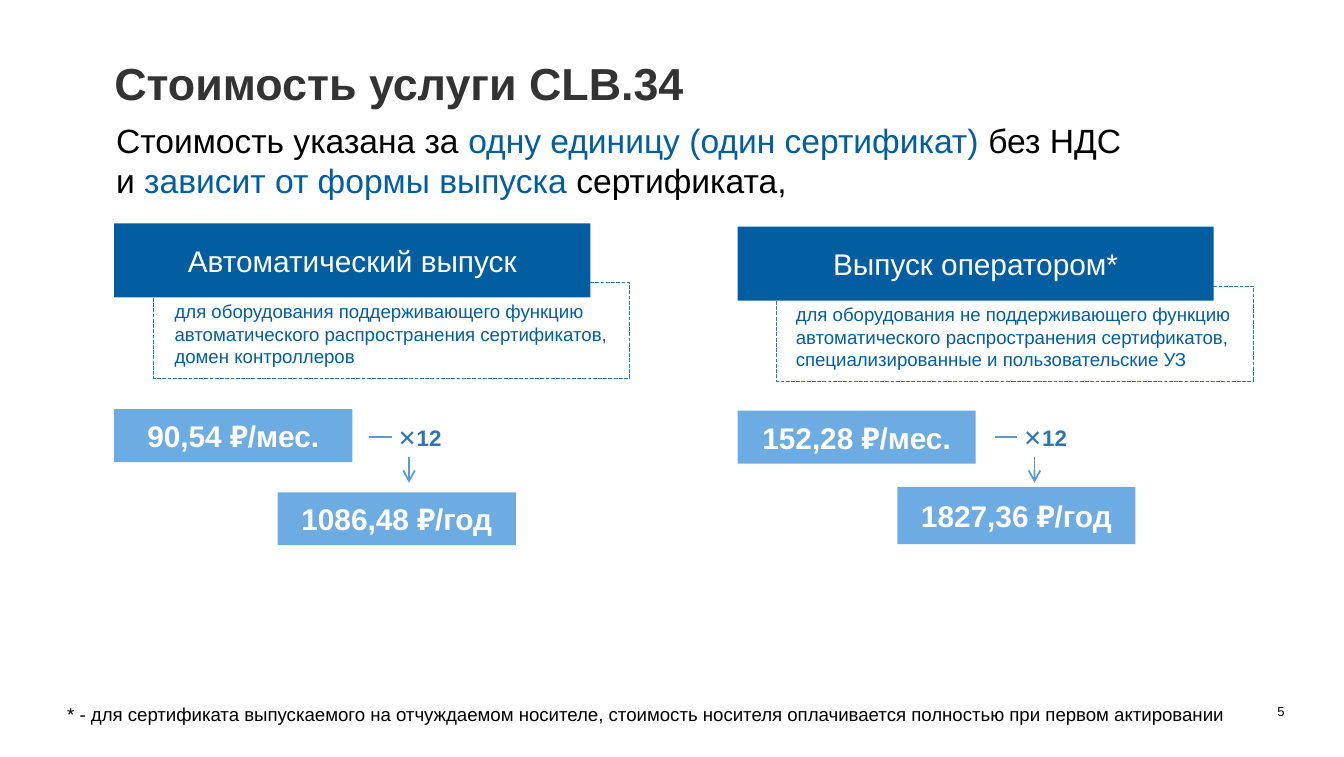
from lxml import etree
from pptx import Presentation
from pptx.dml.color import RGBColor
from pptx.enum.dml import MSO_LINE
from pptx.enum.shapes import MSO_CONNECTOR, MSO_SHAPE
from pptx.enum.text import MSO_ANCHOR, MSO_AUTO_SIZE, PP_ALIGN
from pptx.oxml.ns import qn
from pptx.util import Cm, Pt

RECTANGLE, STRAIGHT = MSO_SHAPE.RECTANGLE, MSO_CONNECTOR.STRAIGHT
LONG_DASH = MSO_LINE.LONG_DASH
TOP, MIDDLE, BOTTOM = MSO_ANCHOR.TOP, MSO_ANCHOR.MIDDLE, MSO_ANCHOR.BOTTOM
LEFT, CENTER, RIGHT, JUSTIFY = PP_ALIGN.LEFT, PP_ALIGN.CENTER, PP_ALIGN.RIGHT, PP_ALIGN.JUSTIFY
NO_AUTOFIT = MSO_AUTO_SIZE.NONE

BLACK = RGBColor(0x00, 0x00, 0x00)
WHITE = RGBColor(0xFF, 0xFF, 0xFF)
DARK_GRAY = RGBColor(0x33, 0x33, 0x33)
DARK_BLUE = RGBColor(0x02, 0x5E, 0xA1)
MID_BLUE = RGBColor(0x2E, 0x75, 0xB6)
ARROW_BLUE = RGBColor(0x5B, 0x9B, 0xD5)
LIGHT_BLUE = RGBColor(0x6C, 0xAC, 0xE3)

DEFAULT_INSETS = (0.25, 0.13, 0.25, 0.13)


def write(shape, lines, size, color, bold=False, align=CENTER, anchor=MIDDLE, insets=DEFAULT_INSETS):
    """Fill a shape with uniformly formatted paragraphs."""
    frame = shape.text_frame
    frame.word_wrap = True
    frame.auto_size = NO_AUTOFIT
    frame.vertical_anchor = anchor
    frame.margin_left, frame.margin_top, frame.margin_right, frame.margin_bottom = map(Cm, insets)
    frame.text = "\n".join(lines)
    for paragraph in frame.paragraphs:
        paragraph.alignment = align
        paragraph.font.name = "Arial"
        paragraph.font.size = Pt(size)
        paragraph.font.bold = bold
        paragraph.font.color.rgb = color


def add_block(left, top, width, height, fill=None):
    """Add a borderless rectangle, filled if a colour is given."""
    block = slide.shapes.add_shape(RECTANGLE, Cm(left), Cm(top), Cm(width), Cm(height))
    block.shadow.inherit = False
    block.line.fill.background()
    if fill is None:
        block.fill.background()
    else:
        block.fill.solid()
        block.fill.fore_color.rgb = fill
    return block


prs = Presentation()
prs.slide_width, prs.slide_height = Cm(25.4), Cm(14.3)
slide = prs.slides.add_slide(prs.slide_layouts[1])

# Title
title = slide.shapes.title
title.left, title.top, title.width, title.height = Cm(2.16), Cm(1.17), Cm(10.92), Cm(1.17)
write(title, ["Стоимость услуги CLB.34"], 24, DARK_GRAY, True, LEFT, TOP, (0, 0, 0, 0))
title.text_frame.paragraphs[0].line_spacing = 0.9

# Introduction with highlighted phrases
intro = slide.placeholders[1]
intro.left, intro.top, intro.width, intro.height = Cm(0.69), Cm(2.13), Cm(22.25), Cm(1.8)
intro_lines = [
    [("Стоимость указана за ", BLACK), ("одну единицу (один сертификат) ", DARK_BLUE), ("без НДС", BLACK)],
    [("и ", BLACK), ("зависит от формы выпуска ", DARK_BLUE), ("сертификата,", BLACK)],
]
frame = intro.text_frame
frame.auto_size = NO_AUTOFIT
frame.vertical_anchor = TOP
for number, phrases in enumerate(intro_lines):
    paragraph = frame.add_paragraph() if number else frame.paragraphs[0]
    properties = paragraph._p.get_or_add_pPr()
    properties.set("marL", "0")
    properties.set("indent", str(Cm(1.25)))
    etree.SubElement(properties, qn("a:buNone"))
    paragraph.alignment = JUSTIFY
    paragraph.space_before = Pt(0)
    paragraph.font.name = "Arial"
    paragraph.font.size = Pt(18)
    for phrase, color in phrases:
        run = paragraph.add_run()
        run.text = phrase
        run.font.color.rgb = color

# Footnote and slide number
footnote = add_block(1.17, 12.98, 22.38, 1.02, WHITE)
write(footnote, ["* - для сертификата выпускаемого на отчуждаемом носителе, стоимость носителя "
                 "оплачивается полностью при первом актировании"],
      10, BLACK, align=LEFT, insets=(0.1, 0.13, 0.25, 0.13))
slide_number = slide.shapes.add_textbox(Cm(22.73), Cm(13.21), Cm(1.55), Cm(0.38))
write(slide_number, ["5"], 7, BLACK, align=RIGHT, anchor=BOTTOM, insets=(0, 0, 0, 0))

# Issue options: left, header top, name, description, its inset,
# month price and top, year price, left, top and height, multiplier left
options = [
    (2.16, 4.22, "Автоматический выпуск",
     ["для оборудования поддерживающего функцию автоматического распространения сертификатов, "
      "домен контроллеров"], 0.4,
     "90,54 ₽/мес.", 7.73, "1086,48 ₽/год", 5.25, 9.3, 1.0, 6.98),
    (13.94, 4.28, "Выпуск оператором*",
     ["для оборудования не поддерживающего функцию автоматического распространения сертификатов,",
      "специализированные и пользовательские УЗ"], 0.36,
     "152,28 ₽/мес.", 7.76, "1827,36 ₽/год", 16.96, 9.2, 1.08, 18.8),
]
for (left, top, name, description, inset, month_price, month_top,
     year_price, year_left, year_top, year_height, times_left) in options:
    # Dashed description behind the header
    details = add_block(left + 0.74, top + 1.12, 9, 1.8)
    details.line.color.rgb = MID_BLUE
    details.line.width = Pt(0.25)
    details.line.dash_style = LONG_DASH
    write(details, description, 10, DARK_BLUE, align=LEFT, anchor=BOTTOM, insets=(inset, 0, 0, 0.2))
    header = add_block(left, top, 9, 1.4, DARK_BLUE)
    write(header, [name], 16, WHITE)

    # Prices
    month = add_block(left, month_top, 4.5, 1, LIGHT_BLUE)
    write(month, [month_price], 16, WHITE, True)
    year = add_block(year_left, year_top, 4.5, year_height, LIGHT_BLUE)
    write(year, [year_price], 16, WHITE, True)

    # Multiplier with a dash before it and an arrow below
    multiplier = slide.shapes.add_group_shape().shapes
    times = multiplier.add_textbox(Cm(times_left + 0.28), Cm(7.6), Cm(1.35), Cm(1.32))
    write(times, ["✕12"], 12, MID_BLUE, True, insets=(0, 0.13, 0, 0.13))
    arrow_x = times_left + 0.75
    for x1, y1, x2, y2 in [(times_left, 8.25, times_left + 0.42, 8.25),
                           (arrow_x, 8.63, arrow_x, 9.12)]:
        stroke = multiplier.add_connector(STRAIGHT, Cm(x1), Cm(y1), Cm(x2), Cm(y2))
        stroke.line.color.rgb = ARROW_BLUE
        stroke.line.width = Pt(1)
        if x1 == x2:
            etree.SubElement(stroke.line._get_or_add_ln(), qn("a:tailEnd"), type="arrow")
        etree.SubElement(stroke._element.spPr, qn("a:effectLst"))

prs.save("out.pptx")
